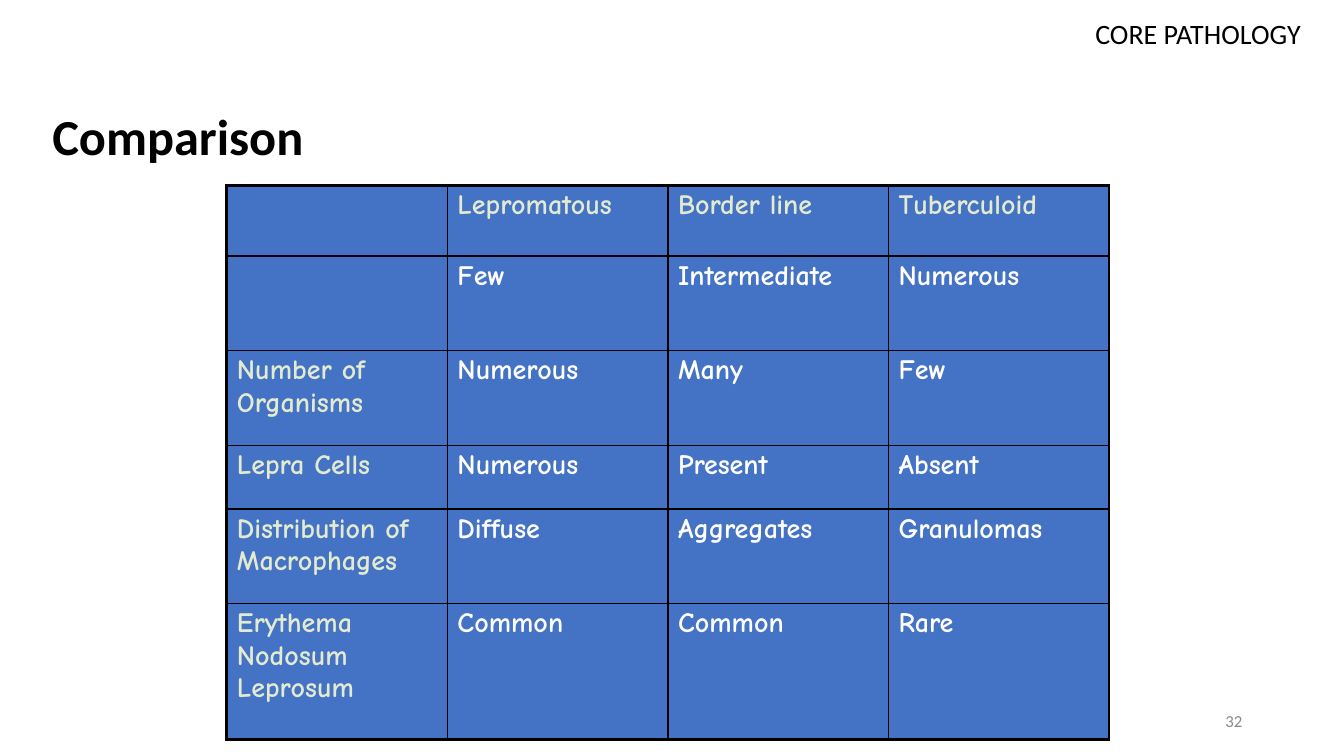
from pptx import Presentation
from pptx import util as u
from pptx.dml.color import RGBColor
from pptx.enum import text
from pptx.oxml import parse_xml
from pptx.oxml.ns import nsdecls

COLOURS = {"black": "000000", "white": "FFFFFF", "grey": "888888",
           "cell": "4472C4", "heading": "E2EACF"}
ROWS = [
    (0.7, "", "Lepromatous", "Border line", "Tuberculoid"),
    (0.94, "", "Few", "Intermediate", "Numerous"),
    (0.94, "Number of\nOrganisms", "Numerous", "Many", "Few"),
    (0.63, "Lepra Cells", "Numerous", "Present", "Absent"),
    (0.94, "Distribution of Macrophages", "Diffuse", "Aggregates", "Granulomas"),
    (1.35, "Erythema Nodosum Leprosum", "Common", "Common", "Rare"),
]


def add_span(para, words, size, colour, font="Calibri", bold=False):
    """Add one styled run to a paragraph."""
    span = para.add_run()
    span.text = words
    span.font.size = u.Pt(size)
    span.font.name = font
    span.font.bold = bold
    span.font.color.rgb = RGBColor.from_string(COLOURS[colour])


def add_label(page, area, words, size, colour, align, anchor, inset=0.05, bold=False, spacing=1.0):
    """Place one line of text in the given area."""
    box = page.shapes.add_textbox(*map(u.Inches, area))
    frame = box.text_frame
    frame.word_wrap = True
    frame.vertical_anchor = anchor
    frame.margin_left = frame.margin_right = u.Inches(0.1)
    frame.margin_top = frame.margin_bottom = u.Inches(inset)
    para = frame.paragraphs[0]
    para.alignment = align
    para.line_spacing = spacing
    add_span(para, words, size, colour, bold=bold)


def add_borders(cell, outer):
    """Draw the four cell borders, thick on the outer sides."""
    properties = cell._tc.get_or_add_tcPr()
    for side in "LRTB":
        width = u.Pt(2.25 if side in outer else 1)
        properties.append(parse_xml(
            f'<a:ln{side} {nsdecls("a")} w="{width}"><a:solidFill>'
            f'<a:srgbClr val="{COLOURS["black"]}"/></a:solidFill></a:ln{side}>'))


def fill_cell(cell, words, colour, outer):
    """Set the borders, fill and text of one cell."""
    add_borders(cell, outer)
    cell.fill.solid()
    cell.fill.fore_color.rgb = RGBColor.from_string(COLOURS["cell"])
    cell.margin_left = cell.margin_right = cell.margin_bottom = 0
    cell.margin_top = u.Inches(0.04)
    frame = cell.text_frame
    for index, line in enumerate(words.split("\n") if words else []):
        para = frame.add_paragraph() if index else frame.paragraphs[0]
        para._p.get_or_add_pPr().set("marL", str(u.Inches(0.1)))
        add_span(para, line, 20, colour, "Comic Neue", True)


def add_comparison(page, area):
    """Build the comparison table in the given area."""
    last_row, last_column = len(ROWS) - 1, len(ROWS[0]) - 2
    table = page.shapes.add_table(last_row + 1, last_column + 1, *map(u.Inches, area)).table
    table.first_row = table.horz_banding = False
    for column in table.columns:
        column.width = u.Inches(area[2] / (last_column + 1))
    for r, (height, *entries) in enumerate(ROWS):
        table.rows[r].height = u.Inches(height)
        for c, words in enumerate(entries):
            sides = {"L": c == 0, "R": c == last_column, "T": r == 0, "B": r == last_row}
            outer = [side for side, thick in sides.items() if thick]
            colour = "white" if r and c else "heading"
            fill_cell(table.cell(r, c), words, colour, outer)


def build_page(deck):
    """Build the comparison slide."""
    page = deck.slides.add_slide(deck.slide_layouts[6])
    left, right = text.PP_ALIGN.LEFT, text.PP_ALIGN.RIGHT
    top, middle = text.MSO_ANCHOR.TOP, text.MSO_ANCHOR.MIDDLE
    add_label(page, (9.42, 6.95, 3, 0.4), "32", 12, "grey", right, middle)
    add_label(page, (0.42, 0.57, 12.42, 1.45), "Comparison", 36, "black", left, middle,
              bold=True, spacing=1.15)
    add_label(page, (9.53, 0.06, 3.47, 0.45), "CORE PATHOLOGY", 20, "black", right, top, inset=0.1)
    add_comparison(page, (2.25, 1.84, 8.75, 5.5))


def main():
    """Create and save the deck."""
    deck = Presentation()
    deck.slide_width, deck.slide_height = u.Inches(13.33), u.Inches(7.5)
    build_page(deck)
    deck.save("out.pptx")


if __name__ == "__main__":
    main()
